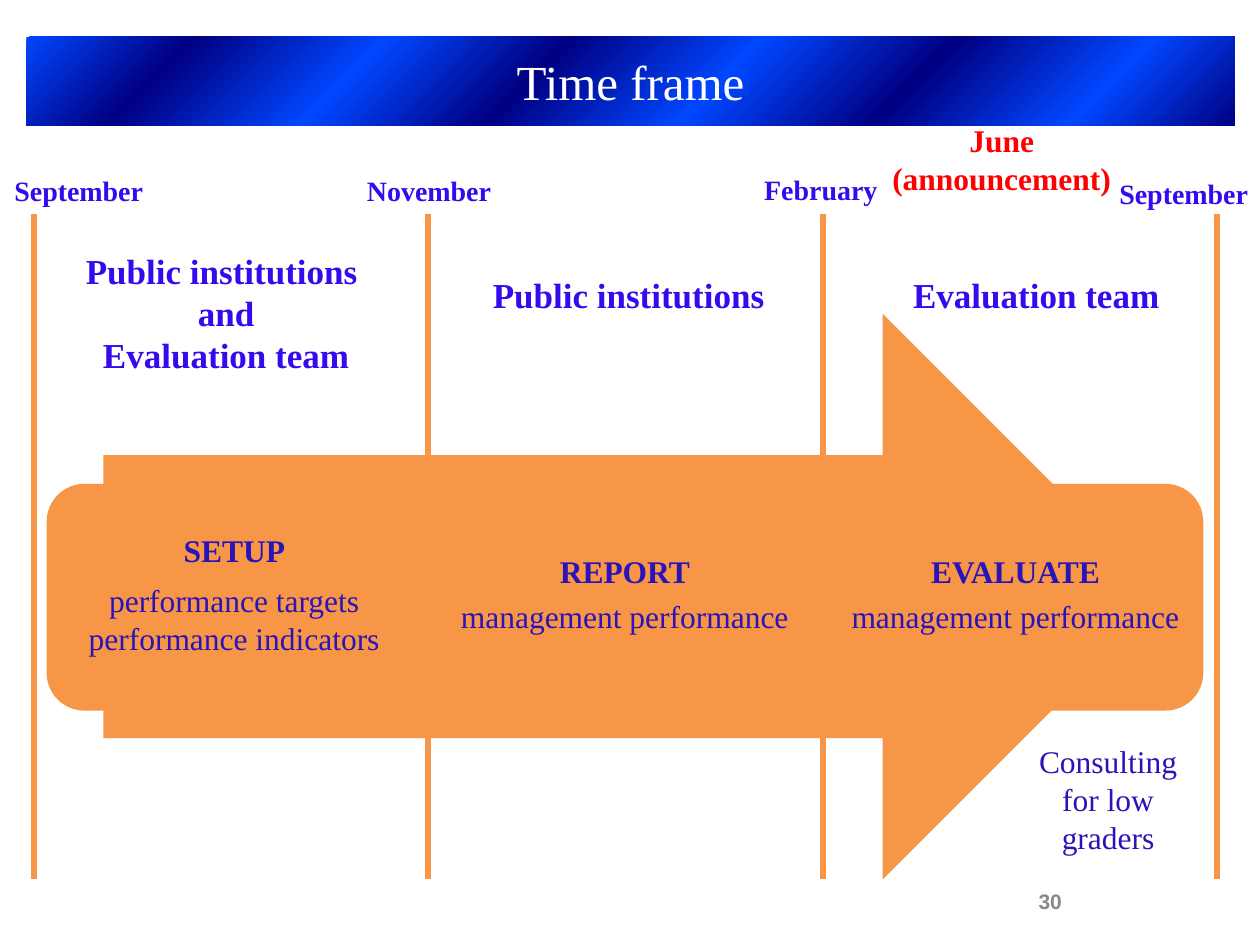
"""Build the evaluation time frame slide."""
from dataclasses import dataclass

from lxml import etree
from pptx import Presentation
from pptx import util as u
from pptx.dml.color import RGBColor
from pptx.enum import shapes, text
from pptx.oxml import parse_xml
from pptx.oxml.ns import nsdecls, qn


@dataclass(frozen=True)
class Theme:
    serif: str = "Times New Roman"
    sans: str = "Arial"
    orange: str = "F79646"
    navy: str = "000082"
    blue: str = "0047FF"
    violet: str = "350AEC"
    indigo: str = "2A13B7"
    red: str = "FF0000"
    gray: str = "898989"
    white: str = "FFFFFF"
    title: int = 28
    actor: int = 20
    body: int = 18
    month: int = 16
    number: int = 12
    line: float = 3.5


theme = Theme()
deck = Presentation()
deck.slide_width, deck.slide_height = u.Inches(10), u.Inches(7.5)
column, row = deck.slide_width / 100, deck.slide_height / 75
page = deck.slides.add_slide(deck.slide_layouts[6])


def grid(left, top, width, height):
    return [round(n * size) for n, size in zip((left, top, width, height), (column, row) * 2)]


def write(box, lines, size, color, bold=True, font=theme.serif,
          anchor=text.MSO_ANCHOR.TOP, **frame_values):
    frame = box.text_frame
    frame_values = {"word_wrap": True, "vertical_anchor": anchor, **frame_values}
    for name, value in frame_values.items():
        setattr(frame, name, value)
    for index, line in enumerate(lines):
        para = frame.paragraphs[0] if index == 0 else frame.add_paragraph()
        para.alignment = text.PP_ALIGN.CENTER
        span = para.add_run()
        span.text = line
        for name, value in {"size": u.Pt(size), "name": font, "bold": bold}.items():
            setattr(span.font, name, value)
        span.font.color.rgb = RGBColor.from_string(color)
    return frame.paragraphs


banner = page.shapes.add_shape(shapes.MSO_SHAPE.RECTANGLE, *grid(2.1, 2.9, 95.9, 7.1))
banner.shadow.inherit = False
banner.line.fill.background()
stops = "".join(
    f'<a:gs pos="{share * 1000}"><a:srgbClr val="{(theme.navy, theme.blue)[index % 2]}"/></a:gs>'
    for index, share in enumerate((0, 13, 28, 43, 58, 72, 87, 100)))
gradient = parse_xml(
    f'<a:gradFill {nsdecls("a")} rotWithShape="1"><a:gsLst>{stops}</a:gsLst>'
    '<a:path path="circle"><a:fillToRect l="100000" t="100000"/></a:path></a:gradFill>')
banner.element.spPr.find(qn("a:prstGeom")).addnext(gradient)
write(banner, ["Time frame"], theme.title, theme.white, False, anchor=text.MSO_ANCHOR.MIDDLE)

process = page.shapes.add_group_shape()
steps = [
    ("SETUP", "performance targets performance indicators"),
    ("REPORT", "management performance"),
    ("EVALUATE", "management performance"),
]
blocks = [(shapes.MSO_SHAPE.RIGHT_ARROW, (8.2, 24.9, 84.3, 44.9))]
blocks += [(shapes.MSO_SHAPE.ROUNDED_RECTANGLE, (3.7 + 31 * index, 38.4, 29.8, 18))
           for index in range(len(steps))]
for kind, area in blocks:
    block = process.shapes.add_shape(kind, *grid(*area))
    block.shadow.inherit = False
    block.fill.solid()
    block.fill.fore_color.rgb = RGBColor.from_string(theme.orange)
    block.line.fill.background()

margins = {f"margin_{side}": u.Inches(0.07) for side in ("left", "top", "right", "bottom")}
for index, step in enumerate(steps):
    box = process.shapes.add_textbox(*grid(4.6 + 31 * index, 39.2, 28, 16.2))
    heading, detail = write(box, step, theme.body, theme.indigo,
                            anchor=text.MSO_ANCHOR.MIDDLE, **margins)
    detail.runs[0].font.bold = False
    heading.line_spacing = 0.9
    if index:
        detail.line_spacing = 0.9
    for para in (heading, detail):
        after = etree.SubElement(para._p.get_or_add_pPr(), qn("a:spcAft"))
        etree.SubElement(after, qn("a:spcPct"), val="35000")

for index in range(4):
    left, top, _, bottom = grid(2.7 + 31.3 * index, 17, 0, 69.8)
    divider = page.shapes.add_connector(shapes.MSO_CONNECTOR.STRAIGHT, left, top, left, bottom)
    divider.line.color.rgb = RGBColor.from_string(theme.orange)
    divider.line.width = u.Pt(theme.line)
    etree.SubElement(divider.element.spPr, qn("a:effectLst"))

actor = (theme.actor, theme.violet)
month = (theme.month, theme.violet)
labels = [
    ((3.2, 19.3, 29.5, 11.1), ["Public institutions ", "and", "Evaluation team"], *actor, True),
    ((36.6, 21.2, 27.3, 4.4), ["Public institutions "], *actor, True),
    ((68.1, 21.2, 28.3, 4.4), ["Evaluation team"], *actor, True),
    ((-1.6, 13.3, 15.7, 3.7), ["September"], *month, True),
    ((26.2, 13.3, 15.7, 3.7), ["November"], *month, True),
    ((57.3, 13.2, 15.7, 3.7), ["February"], *month, True),
    ((86.1, 13.5, 15.7, 3.7), ["September"], *month, True),
    ((81.3, 58.4, 13.3, 10.1), ["Consulting for low graders"], theme.body, theme.indigo, False),
    ((69.7, 9.1, 19.6, 7.1), ["June (announcement)"], theme.body, theme.red, True),
]
for area, lines, size, color, bold in labels:
    box = page.shapes.add_textbox(*grid(*area))
    write(box, lines, size, color, bold, auto_size=text.MSO_AUTO_SIZE.SHAPE_TO_FIT_TEXT)

number = page.shapes.add_textbox(*grid(71.7, 69.5, 23.3, 4))
write(number, ["30"], theme.number, theme.gray, font=theme.sans, anchor=text.MSO_ANCHOR.MIDDLE)

deck.save("out.pptx")
